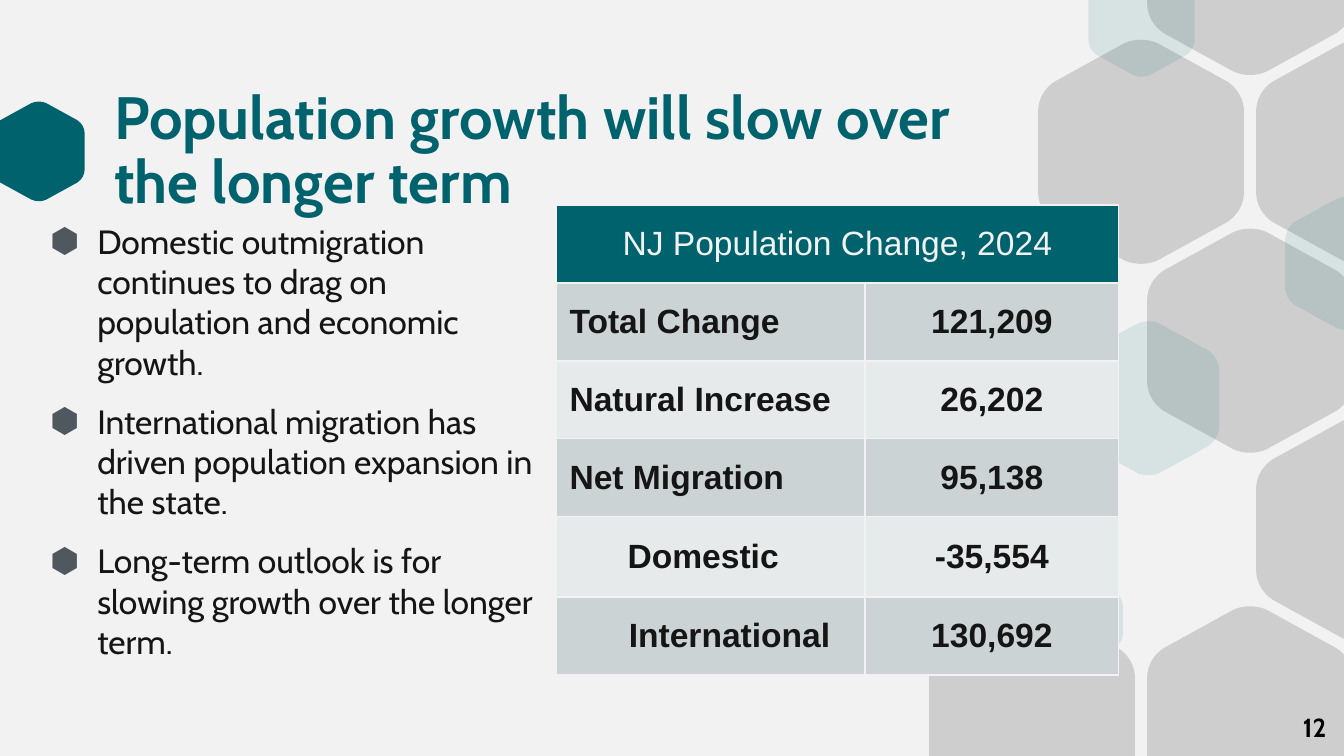
from dataclasses import dataclass

from lxml import etree
from pptx import Presentation
from pptx.dml.color import RGBColor
from pptx.enum.text import MSO_ANCHOR, PP_ALIGN
from pptx.oxml.ns import qn
from pptx.util import Cm, Pt

LEFT, CENTER, RIGHT = PP_ALIGN.LEFT, PP_ALIGN.CENTER, PP_ALIGN.RIGHT
TOP, MIDDLE = MSO_ANCHOR.TOP, MSO_ANCHOR.MIDDLE

TEAL, GREY, PALE, INK = "00626D", "CECECE", "F2F2F2", "151515"
BAND_DARK, BAND_LIGHT, BULLET = "CCD3D4", "E7EAEB", "4F585F"
SLIDE_WIDTH, SLIDE_HEIGHT = 25.4, 14.29
HEXAGON_RATIO = 1.1
UPPER_RIGHT = [(1, 0.32), (1, 0.27), (0.97, 0.22), (0.92, 0.19)]
PEAK = [(0.58, 0.02), (0.53, 0), (0.47, 0), (0.42, 0.02)]


@dataclass
class Hexagon:
    left: float
    top: float
    width: float
    color: str
    opacity: int = 100


@dataclass
class TextStyle:
    size: float
    color: str
    bold: bool = False
    font: str = "Cabin"


@dataclass
class PopulationRow:
    label: str
    value: str
    indent: float = 0
    inset: float = 0
    height: float = 1.47


GRID_CELLS = [(-1, 3), (1, 3), (2, 0), (1, -1), (1, 1), (0, 0), (2, 2)]
HEXAGONS = [Hexagon(-0.13, 1.91, 1.73, TEAL)]
HEXAGONS += [
    Hexagon(19.62 + 2.06 * column, 0.73 + 3.57 * row, 3.89, GREY)
    for column, row in GRID_CELLS
]
HEXAGONS += [
    Hexagon(24.29, 3.71, 2.31, TEAL, 11),
    Hexagon(19.82, 10.95, 1.4, TEAL, 11),
    Hexagon(20.57, -0.75, 2.01, TEAL, 11),
    Hexagon(20.37, 6.06, 2.67, TEAL, 11),
]

OUTLOOK_POINTS = [
    "Domestic outmigration continues to drag on population and economic growth.",
    "International migration has driven population expansion in the state.",
    "Long-term outlook is for slowing growth over the longer term.",
]

POPULATION_ROWS = [
    PopulationRow("Total Change", "121,209"),
    PopulationRow("Natural Increase", "26,202"),
    PopulationRow("Net Migration", "95,138"),
    PopulationRow("Domestic", "-35,554", indent=0.97, inset=0.38, height=1.53),
    PopulationRow("International", "130,692", indent=1.12),
]


def rgb(value: str) -> RGBColor:
    return RGBColor.from_string(value)


def hexagon_curves() -> list:
    upper_left = [(1 - x, y) for x, y in reversed(UPPER_RIGHT)]
    upper = [UPPER_RIGHT, PEAK, upper_left]
    return upper + [[(1 - x, 1 - y) for x, y in curve] for curve in upper]


def hexagon_pieces(hexagon: Hexagon) -> list:
    height = hexagon.width * HEXAGON_RATIO
    pieces = []
    for curve in hexagon_curves():
        heights = [hexagon.top + y * height for _, y in curve]
        if max(heights) <= 0 or min(heights) >= SLIDE_HEIGHT:
            side = [x for x, _ in (curve[0], curve[-1]) if x in (0, 1)]
            edge = 0 if max(heights) <= 0 else SLIDE_HEIGHT
            piece = [(x, edge) for x in side]
        else:
            piece = [(x, y) for (x, _), y in zip(curve, heights)]
        if piece:
            pieces.append([
                (Cm(hexagon.left + x * hexagon.width), Cm(y)) for x, y in piece
            ])
    return pieces


def round_corner(lines: list) -> None:
    bezier = etree.Element(qn("a:cubicBezTo"))
    lines[0].addprevious(bezier)
    for line in lines:
        bezier.append(line[0])
        line.getparent().remove(line)


def draw_hexagon(slide, hexagon: Hexagon) -> None:
    pieces = hexagon_pieces(hexagon)
    points = [point for piece in pieces for point in piece]
    builder = slide.shapes.build_freeform(*points[0])
    builder.add_line_segments(points[1:], close=True)
    shape = builder.convert_to_shape()
    steps = list(next(shape._element.iter(qn("a:path"))))
    position = 0
    for piece in pieces:
        if len(piece) == 4:
            round_corner(steps[position + 1:position + 4])
        position += len(piece)
    shape.shadow.inherit = False
    shape.line.fill.background()
    shape.fill.solid()
    shape.fill.fore_color.rgb = rgb(hexagon.color)
    if hexagon.opacity < 100:
        color = shape._element.spPr.find(qn("a:solidFill")).find(qn("a:srgbClr"))
        etree.SubElement(color, qn("a:alpha"), val=str(hexagon.opacity * 1000))


def add_run(paragraph, text: str, style: TextStyle) -> None:
    run = paragraph.add_run()
    run.text = text
    run.font.size = Pt(style.size)
    run.font.name = style.font
    run.font.bold = style.bold
    run.font.color.rgb = rgb(style.color)


def add_bullet(paragraph) -> None:
    properties = paragraph._p.get_or_add_pPr()
    properties.set("marL", str(Cm(1.27)))
    properties.set("indent", str(Cm(-0.89)))
    color = etree.SubElement(properties, qn("a:buClr"))
    etree.SubElement(color, qn("a:srgbClr"), val=BULLET)
    etree.SubElement(properties, qn("a:buFont"), typeface="Cabin")
    etree.SubElement(properties, qn("a:buChar"), char="⬢")


def add_text_frame(slide, left: float, top: float, width: float, height: float, anchor):
    box = slide.shapes.add_textbox(Cm(left), Cm(top), Cm(width), Cm(height))
    frame = box.text_frame
    frame.word_wrap = True
    frame.vertical_anchor = anchor
    frame.margin_left = frame.margin_right = 0
    frame.margin_top = frame.margin_bottom = 0
    return frame


def draw_outlook(slide) -> None:
    frame = add_text_frame(slide, 0.57, 4.17, 9.65, 9.83, TOP)
    for index, text in enumerate(OUTLOOK_POINTS):
        paragraph = frame.add_paragraph() if index else frame.paragraphs[0]
        add_bullet(paragraph)
        if index:
            paragraph.space_before = Pt(10)
        add_run(paragraph, text, TextStyle(18, INK))


def fill_cell(cell, text: str, style: TextStyle, fill: str, alignment) -> None:
    properties = cell._tc.get_or_add_tcPr()
    for side in ("lnL", "lnR", "lnT", "lnB"):
        line = etree.SubElement(properties, qn(f"a:{side}"), w=str(Pt(1)))
        solid = etree.SubElement(line, qn("a:solidFill"))
        etree.SubElement(solid, qn("a:srgbClr"), val=PALE)
    cell.fill.solid()
    cell.fill.fore_color.rgb = rgb(fill)
    cell.vertical_anchor = MIDDLE
    paragraph = cell.text_frame.paragraphs[0]
    paragraph.alignment = alignment
    if text:
        add_run(paragraph, text, style)


def draw_population_table(slide) -> None:
    frame = slide.shapes.add_table(
        len(POPULATION_ROWS) + 1, 2, Cm(10.51), Cm(3.88), Cm(10.63), Cm(8.88))
    table = frame.table
    table.columns[0].width = Cm(5.84)
    table.columns[1].width = Cm(4.79)
    table.rows[0].height = Cm(1.47)
    heading = TextStyle(18, PALE, font="Arial")
    fill_cell(table.cell(0, 0), "NJ Population Change, 2024", heading, TEAL, CENTER)
    fill_cell(table.cell(0, 1), "", heading, TEAL, CENTER)
    table.cell(0, 0).merge(table.cell(0, 1))
    style = TextStyle(18, INK, True, "Arial")
    for index, row in enumerate(POPULATION_ROWS, 1):
        fill = BAND_DARK if index % 2 else BAND_LIGHT
        table.rows[index].height = Cm(row.height)
        label = table.cell(index, 0)
        fill_cell(label, row.label, style, fill, LEFT)
        fill_cell(table.cell(index, 1), row.value, style, fill, CENTER)
        if row.indent:
            properties = label.text_frame.paragraphs[0]._p.get_or_add_pPr()
            properties.set("marL", "0")
            properties.set("indent", str(Cm(row.indent)))
        if row.inset:
            label.margin_left = label.margin_right = Cm(row.inset)
            label.margin_top = label.margin_bottom = Cm(row.inset)


def main() -> None:
    presentation = Presentation()
    presentation.slide_width = Cm(SLIDE_WIDTH)
    presentation.slide_height = Cm(SLIDE_HEIGHT)
    slide = presentation.slides.add_slide(presentation.slide_layouts[6])
    slide.background.fill.solid()
    slide.background.fill.fore_color.rgb = rgb(PALE)
    for hexagon in HEXAGONS:
        draw_hexagon(slide, hexagon)
    title = add_text_frame(slide, 2.16, 2.33, 16.69, 1.09, MIDDLE).paragraphs[0]
    title.line_spacing = 0.9
    add_run(title, "Population growth will slow over the longer term",
            TextStyle(32, TEAL, True))
    draw_outlook(slide)
    number = add_text_frame(slide, 23.55, 13.2, 1.52, 1.09, MIDDLE).paragraphs[0]
    number.alignment = RIGHT
    add_run(number, "12", TextStyle(14, "000000", True))
    draw_population_table(slide)
    presentation.save("out.pptx")


if __name__ == "__main__":
    main()
